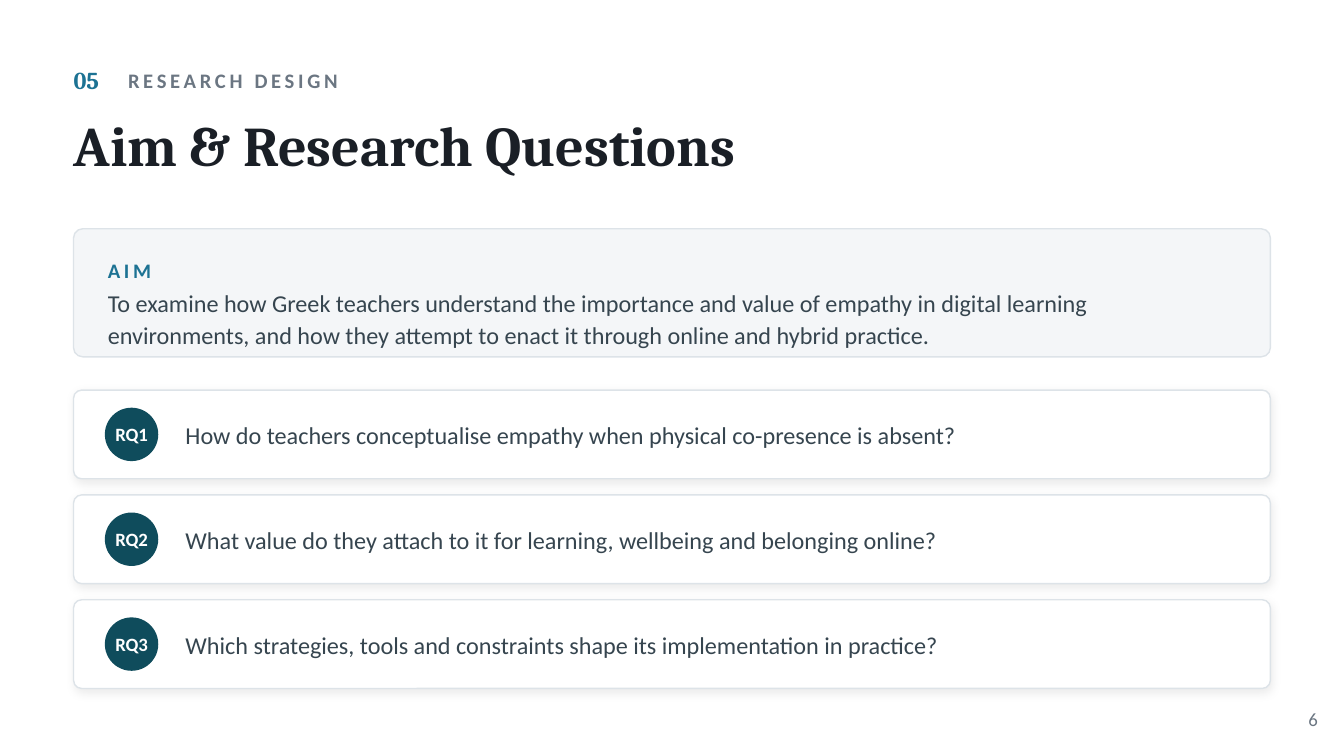
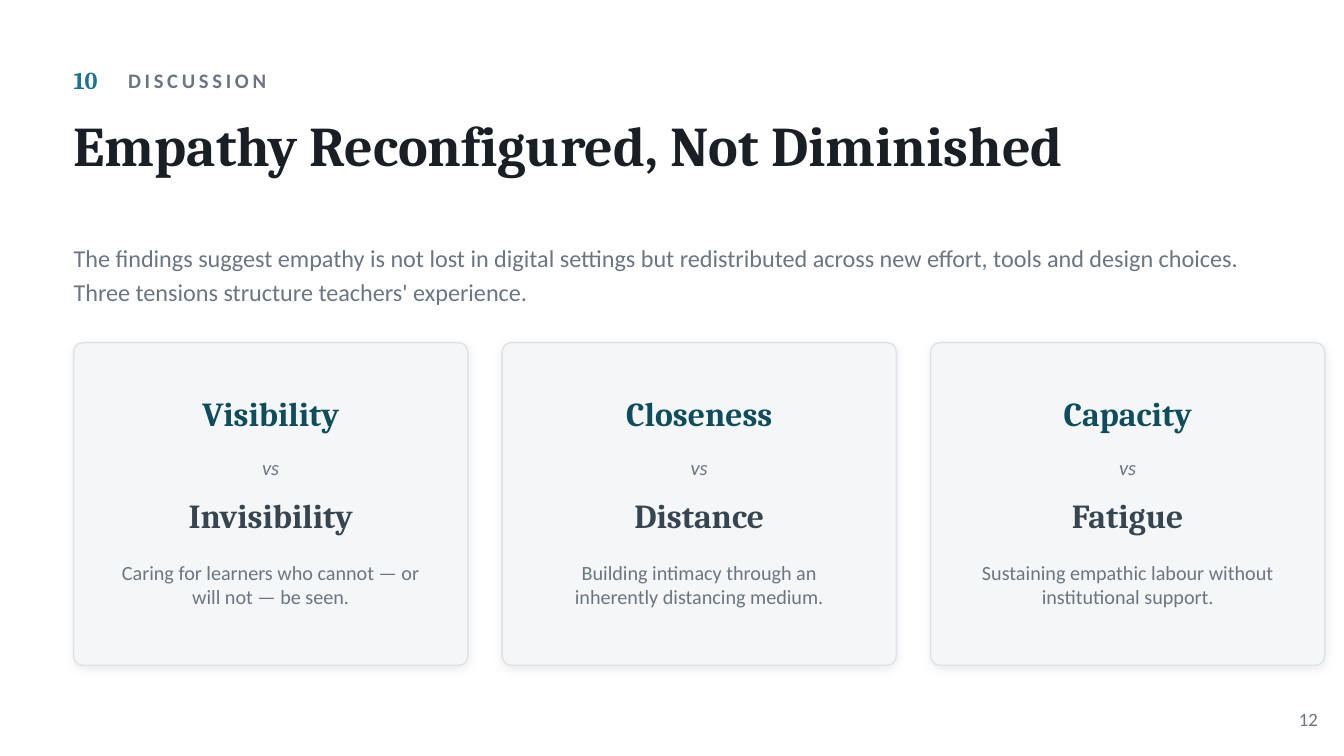
from dataclasses import dataclass
from typing import NamedTuple

from lxml.etree import SubElement
from pptx import Presentation
from pptx.dml.color import RGBColor
from pptx.enum.shapes import MSO_SHAPE
from pptx.enum.text import MSO_ANCHOR, MSO_AUTO_SIZE, PP_ALIGN
from pptx.oxml.ns import qn
from pptx.presentation import Presentation as Deck
from pptx.shapes.autoshape import Shape
from pptx.slide import Slide
from pptx.text.text import TextFrame
from pptx.util import Inches, Pt


# Theme: colours, fonts and type sizes
@dataclass(frozen=True)
class Theme:
    ink: str = "1A1F26"
    slate: str = "36454F"
    muted: str = "6B7682"
    accent: str = "1C7293"
    deep: str = "0F4C5C"
    panel: str = "F4F6F8"
    border: str = "DDE3E8"
    white: str = "FFFFFF"
    shadow: str = "000000"
    serif: str = "Cambria"
    sans: str = "Calibri"
    title: float = 40
    term: float = 24
    body: float = 17.33
    label: float = 14.67
    note: float = 14.4
    small: float = 13.33


THEME = Theme()


@dataclass(frozen=True)
class TextStyle:
    size: float
    color: str
    font: str = THEME.sans
    bold: bool = False
    italic: bool = False
    tracking: float = 0
    leading: float | None = None
    align: PP_ALIGN = PP_ALIGN.LEFT
    anchor: MSO_ANCHOR = MSO_ANCHOR.MIDDLE


TITLE = TextStyle(THEME.title, THEME.ink, THEME.serif, bold=True, leading=45.3,
                  anchor=MSO_ANCHOR.TOP)
SECTION_NUMBER = TextStyle(THEME.body, THEME.accent, THEME.serif, bold=True)
SECTION_NAME = TextStyle(THEME.label, THEME.muted, bold=True, tracking=2.67)
PAGE_NUMBER = TextStyle(THEME.small, THEME.muted, align=PP_ALIGN.RIGHT)
AIM_LABEL = TextStyle(THEME.label, THEME.accent, bold=True, tracking=2.67)
AIM_BODY = TextStyle(THEME.body, THEME.slate, leading=22.7)
BADGE = TextStyle(THEME.small, THEME.white, bold=True, align=PP_ALIGN.CENTER)
QUESTION = TextStyle(THEME.body, THEME.slate, leading=21.3)
LEAD = TextStyle(THEME.body, THEME.muted, leading=24)
TERM = TextStyle(THEME.term, THEME.deep, THEME.serif, bold=True, align=PP_ALIGN.CENTER)
OPPOSITE = TextStyle(THEME.term, THEME.slate, THEME.serif, bold=True, align=PP_ALIGN.CENTER)
VERSUS = TextStyle(THEME.label, THEME.muted, italic=True, align=PP_ALIGN.CENTER)
TENSION_NOTE = TextStyle(THEME.note, THEME.muted, leading=17.3, align=PP_ALIGN.CENTER,
                         anchor=MSO_ANCHOR.TOP)


class Area(NamedTuple):
    left: float
    top: float
    width: float
    height: float

    def lengths(self) -> list[Inches]:
        return [Inches(value) for value in self]


class Heading(NamedTuple):
    number: str
    section: str
    title: str
    page_number: str


class Tension(NamedTuple):
    term: str
    opposite: str
    note: str


MARGIN = 0.73
CONTENT_WIDTH = 11.87


# Drawing helpers
def write(frame: TextFrame, text: str, style: TextStyle) -> None:
    frame_format = {
        "word_wrap": True, "auto_size": MSO_AUTO_SIZE.NONE,
        "vertical_anchor": style.anchor,
        "margin_left": 0, "margin_top": 0, "margin_right": 0, "margin_bottom": 0,
    }
    for name, value in frame_format.items():
        setattr(frame, name, value)
    para = frame.paragraphs[0]
    para.alignment = style.align
    if style.leading:
        para.line_spacing = Pt(style.leading)
    span = para.add_run()
    span.text = text
    font_format = {"name": style.font, "size": Pt(style.size),
                   "bold": style.bold, "italic": style.italic}
    for name, value in font_format.items():
        setattr(span.font, name, value)
    span.font.color.rgb = RGBColor.from_string(style.color)
    if style.tracking:
        span._r.get_or_add_rPr().set("spc", str(round(style.tracking * 100)))


def add_text(page: Slide, area: Area, text: str, style: TextStyle) -> None:
    box = page.shapes.add_textbox(*area.lengths())
    write(box.text_frame, text, style)


def add_soft_shadow(shape: Shape) -> None:
    effects = shape._element.spPr.find(qn("a:effectLst"))
    shadow = SubElement(effects, qn("a:outerShdw"), blurRad=str(Pt(7)), dist=str(Pt(2)),
                        dir="5400000", algn="t", rotWithShape="0")
    color = SubElement(shadow, qn("a:srgbClr"), val=THEME.shadow)
    SubElement(color, qn("a:alpha"), val="8000")


def add_card(page: Slide, area: Area, fill: str, radius: float, raised: bool) -> None:
    card = page.shapes.add_shape(MSO_SHAPE.ROUNDED_RECTANGLE, *area.lengths())
    card.adjustments[0] = radius / min(area.width, area.height)
    card.fill.solid()
    card.fill.fore_color.rgb = RGBColor.from_string(fill)
    card.line.color.rgb = RGBColor.from_string(THEME.border)
    card.line.width = Pt(1)
    card.shadow.inherit = False
    if raised:
        add_soft_shadow(card)


def add_badge(page: Slide, area: Area, text: str) -> None:
    badge = page.shapes.add_shape(MSO_SHAPE.OVAL, *area.lengths())
    badge.fill.solid()
    badge.fill.fore_color.rgb = RGBColor.from_string(THEME.deep)
    badge.line.fill.background()
    badge.shadow.inherit = False
    write(badge.text_frame, text, BADGE)
    badge.text_frame.word_wrap = False


# Shared frame: section line, title and page number
def add_page(deck: Deck, heading: Heading) -> Slide:
    page = deck.slides.add_slide(deck.slide_layouts.get_by_name("Title Only"))
    title = page.shapes.title
    title_area = Area(MARGIN, 1.13, CONTENT_WIDTH, 1.13)
    for name, value in zip(title_area._fields, title_area.lengths()):
        setattr(title, name, value)
    write(title.text_frame, heading.title, TITLE)
    add_text(page, Area(MARGIN, 0.56, 0.67, 0.47), heading.number, SECTION_NUMBER)
    add_text(page, Area(1.27, 0.56, 9.33, 0.47), heading.section, SECTION_NAME)
    add_text(page, Area(12.4, 6.93, 0.67, 0.4), heading.page_number, PAGE_NUMBER)
    return page


# Slide: aim panel above a stack of numbered questions
def add_questions_page(deck: Deck) -> None:
    page = add_page(deck, Heading("05", "RESEARCH DESIGN", "Aim & Research Questions", "6"))
    add_card(page, Area(MARGIN, 2.27, CONTENT_WIDTH, 1.27), THEME.panel, 0.09, raised=False)
    add_text(page, Area(1.07, 2.48, 1.33, 0.4), "AIM", AIM_LABEL)
    add_text(page, Area(1.07, 2.85, 11.1, 0.6),
             "To examine how Greek teachers understand the importance and value of empathy "
             "in digital learning environments, and how they attempt to enact it through "
             "online and hybrid practice.", AIM_BODY)

    questions = [
        "How do teachers conceptualise empathy when physical co-presence is absent?",
        "What value do they attach to it for learning, wellbeing and belonging online?",
        "Which strategies, tools and constraints shape its implementation in practice?",
    ]
    first_top, height, gap, badge_size = 3.87, 0.88, 0.16, 0.53
    for index, question in enumerate(questions):
        top = first_top + index * (height + gap)
        badge_top = top + (height - badge_size) / 2
        add_card(page, Area(MARGIN, top, CONTENT_WIDTH, height), THEME.white, 0.08, raised=True)
        add_badge(page, Area(1.04, badge_top, badge_size, badge_size), f"RQ{index + 1}")
        add_text(page, Area(1.84, top, 10.53, height), question, QUESTION)


# Slide: three cards, each setting a term against its opposite
def add_tensions_page(deck: Deck) -> None:
    page = add_page(deck, Heading("10", "DISCUSSION",
                                  "Empathy Reconfigured, Not Diminished", "12"))
    add_text(page, Area(MARGIN, 2.27, CONTENT_WIDTH, 0.87),
             "The findings suggest empathy is not lost in digital settings but redistributed "
             "across new effort, tools and design choices. Three tensions structure "
             "teachers' experience.", LEAD)

    tensions = [
        Tension("Visibility", "Invisibility",
                "Caring for learners who cannot — or will not — be seen."),
        Tension("Closeness", "Distance",
                "Building intimacy through an inherently distancing medium."),
        Tension("Capacity", "Fatigue",
                "Sustaining empathic labour without institutional support."),
    ]
    width, gap, padding = 3.91, 0.34, 0.4
    for index, tension in enumerate(tensions):
        left = MARGIN + index * (width + gap)
        add_card(page, Area(left, 3.4, width, 3.2), THEME.panel, 0.09, raised=True)
        rows = [
            (3.83, 0.53, tension.term, TERM),
            (4.44, 0.4, "vs", VERSUS),
            (4.84, 0.53, tension.opposite, OPPOSITE),
            (5.56, 0.87, tension.note, TENSION_NOTE),
        ]
        for top, height, text, style in rows:
            add_text(page, Area(left + padding, top, width - 2 * padding, height), text, style)


def main() -> None:
    deck = Presentation()
    deck.slide_width, deck.slide_height = Inches(13.33), Inches(7.5)
    add_questions_page(deck)
    add_tensions_page(deck)
    deck.save("out.pptx")


if __name__ == "__main__":
    main()
